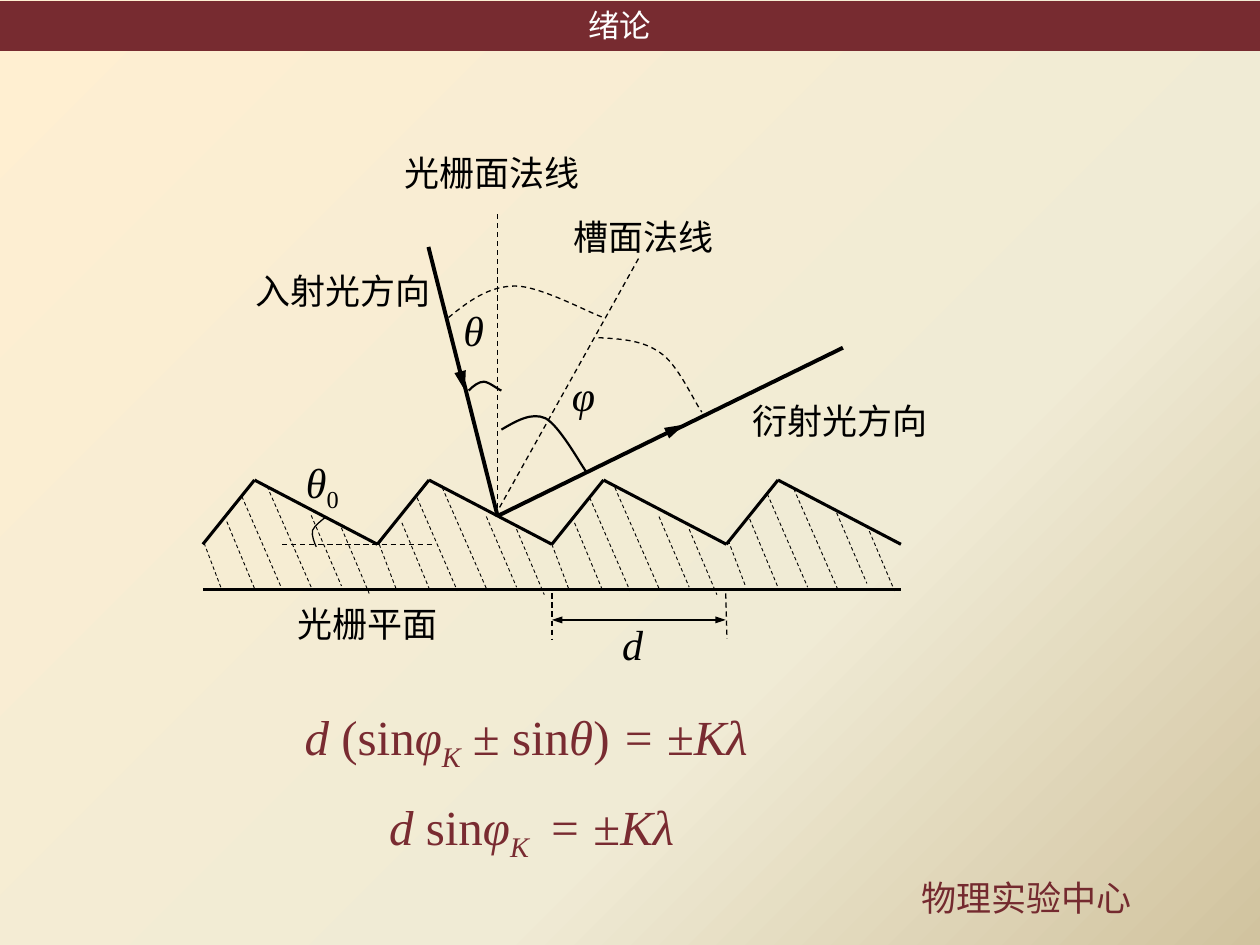
from copy import deepcopy

from lxml.etree import SubElement
from pptx import Presentation
from pptx.dml.color import RGBColor
from pptx.enum.dml import MSO_LINE
from pptx.enum.shapes import MSO_CONNECTOR, MSO_SHAPE
from pptx.enum.text import MSO_ANCHOR, MSO_AUTO_SIZE, PP_ALIGN
from pptx.oxml.ns import qn
from pptx.util import Inches, Pt

CJK = "Noto Sans CJK SC"
SERIF = "Times New Roman"
BLACK, BAR, FOOTER, FORMULA = "000000", "772B30", "742A2F", "792B31"
BACKGROUND = [(0, "FFEFD1"), (0.65, "F0EBD5"), (1, "D1C39F")]

PITCH, TEETH = 1.385, 4
GRATING_LEFT, VALLEY, PEAK, BASE = 1.61, 4.32, 3.81, 4.68
PEAK_OFFSET = 0.41
HATCH = [
    (1.62, 4.31, 1.76, 4.68), (1.8, 4.14, 2.02, 4.67),
    (1.92, 3.94, 2.24, 4.68), (2.12, 3.86, 2.47, 4.66),
    (2.47, 4.09, 2.71, 4.65), (2.71, 4.19, 2.93, 4.71),
]
HATCH_SHIFTS = [(0, 0), (1.39, 0.01), (2.76, 0.01)]
LAST_HATCH = [
    (5.78, 4.29, 5.92, 4.66), (5.95, 4.12, 6.17, 4.65),
    (6.09, 3.92, 6.41, 4.66), (6.3, 3.88, 6.65, 4.68),
    (6.64, 4.07, 6.88, 4.63), (6.88, 4.17, 7.1, 4.69),
]

DASHED_LINES = [
    (2.24, 4.32, 3.45, 4.32), (3.95, 1.7, 3.95, 4.09), (3.93, 4.09, 5.08, 2.03),
    (4.38, 4.71, 4.38, 5.07), (5.76, 4.71, 5.77, 5.07),
]
RAY_ARROW = {"tailEnd": ("med", "lg")}
RAYS = [
    ((3.4, 1.96, 3.69, 3.1), RAY_ARROW), ((3.68, 3.03, 3.95, 4.1), {}),
    ((3.96, 4.09, 5.43, 3.37), RAY_ARROW), ((6.69, 2.76, 5.32, 3.43), {}),
]
PITCH_LINE = (4.38, 4.92, 5.76, 4.92)
PITCH_ARROWS = {"headEnd": ("sm", "med"), "tailEnd": ("sm", "med")}

ARCS = [
    ([(3.72, 3.1), (3.76, 3.06), (3.8, 3.03), (3.84, 3.03),
      (3.88, 3.03), (3.95, 3.09), (3.98, 3.1)], 1.25, False),
    ([(3.98, 3.41), (4.1, 3.34), (4.22, 3.27), (4.33, 3.32),
      (4.44, 3.38), (4.6, 3.67), (4.65, 3.74)], 1.25, False),
    ([(2.59, 4.1), (2.54, 4.14), (2.5, 4.17), (2.48, 4.21),
      (2.47, 4.25), (2.5, 4.32), (2.51, 4.34)], 0.75, False),
    ([(3.56, 2.52), (3.72, 2.39), (3.88, 2.27), (4.09, 2.27),
      (4.29, 2.27), (4.67, 2.48), (4.79, 2.52)], 0.75, True),
    ([(4.75, 2.68), (4.93, 2.69), (5.1, 2.7), (5.24, 2.8),
      (5.38, 2.89), (5.51, 3.19), (5.57, 3.27)], 0.75, True),
]

LABELS = [
    ("光栅平面", 2.26, 4.73), ("入射光方向", 1.93, 2.09), ("衍射光方向", 5.87, 3.12),
    ("光栅面法线", 3.11, 1.15), ("槽面法线", 4.45, 1.66),
]
SYMBOLS = [
    ([("θ", "italic"), ("0", "sub")], 2.33, 3.57, 0.67),
    ([("θ", "italic")], 3.58, 2.37, 0.6),
    ([("φ", "italic")], 4.44, 2.88, 0.6),
    ([("d", "italic")], 4.84, 4.86, 0.6),
]
EQUATIONS = [
    ([("d ", "italic"), ("(sin", ""), ("φ", "italic"), ("K", "italic sub"), (" ± sin", ""),
      ("θ", "italic"), (") ", ""), ("= ", "italic"), ("±", ""), ("Kλ", "italic")],
     2.32, 5.56, 4.23),
    ([("d ", "italic"), ("sin", ""), ("φ", "italic"), ("K ", "italic sub"),
      (" = ", "italic"), ("±", ""), ("Kλ", "italic")], 2.99, 6.27, 2.83),
]


def color(value):
    return RGBColor.from_string(value)


def style_font(run, size, name, value):
    run.font.size = Pt(size)
    run.font.name = name
    run.font.color.rgb = color(value)
    if name != SERIF:
        SubElement(run.font._element, qn("a:ea"), typeface=CJK)


def style_line(line, width, dashed):
    line.color.rgb = color(BLACK)
    line.width = Pt(width)
    if dashed:
        line.dash_style = MSO_LINE.DASH


def add_line(shapes, ends, width, dashed=False, arrows=None):
    connector = shapes.add_connector(MSO_CONNECTOR.STRAIGHT, *map(Inches, ends))
    style_line(connector.line, width, dashed)
    for end, (breadth, length) in (arrows or {}).items():
        SubElement(connector.line._get_or_add_ln(), qn(f"a:{end}"),
                   type="triangle", w=breadth, len=length)
    SubElement(connector._element.spPr, qn("a:effectLst"))


def add_arc(shapes, controls, width, dashed):
    points = [(Inches(x), Inches(y)) for x, y in controls]
    builder = shapes.build_freeform(*points[0])
    builder.add_line_segments(points[1:], close=False)
    shape = builder.convert_to_shape()
    outline = shape._element.xpath(".//a:path")[0]
    segments = outline.findall(qn("a:lnTo"))
    for first in range(0, len(segments), 3):
        curve = SubElement(outline, qn("a:cubicBezTo"))
        for segment in segments[first:first + 3]:
            curve.append(segment[0])
            outline.remove(segment)
    shape.shadow.inherit = False
    shape.fill.background()
    style_line(shape.line, width, dashed)


def add_text(shapes, parts, place, size, name, value=BLACK, align=PP_ALIGN.LEFT, wrap=True):
    text_frame = shapes.add_textbox(*map(Inches, place)).text_frame
    text_frame.word_wrap = wrap
    paragraph = text_frame.paragraphs[0]
    paragraph.alignment = align
    for text, style in parts:
        run = paragraph.add_run()
        run.text = text
        style_font(run, size, name, value)
        run.font.italic = "italic" in style
        if "sub" in style:
            run.font._element.set("baseline", "-25000")


def set_background(slide):
    fill = slide.background.fill
    fill.gradient()
    fill.gradient_angle = 315
    stops = slide.element.xpath(".//a:gsLst")[0]
    stops.append(deepcopy(stops[-1]))
    for stop, (position, value) in zip(fill.gradient_stops, BACKGROUND):
        stop.position = position
        stop.color.rgb = color(value)


def add_header(slide):
    bar = slide.shapes.add_shape(
        MSO_SHAPE.RECTANGLE, 0, Inches(0.01), Inches(10), Inches(0.39))
    bar.shadow.inherit = False
    bar.fill.solid()
    bar.fill.fore_color.rgb = color(BAR)
    bar.line.color.rgb = color(BAR)
    bar.line.width = Pt(0.75)
    slide.shapes._spTree.insert(2, bar._element)

    title = slide.shapes.title
    title.left, title.top, title.width, title.height = map(Inches, (4.57, 0, 1.36, 0.4))
    text_frame = title.text_frame
    text_frame.text = "绪论"
    text_frame.auto_size = MSO_AUTO_SIZE.NONE
    text_frame.vertical_anchor = MSO_ANCHOR.TOP
    text_frame.paragraphs[0].alignment = PP_ALIGN.LEFT
    style_font(text_frame.paragraphs[0].runs[0], 18, CJK, "FFFFFF")


def add_grating(shapes):
    for tooth in range(TEETH):
        left = GRATING_LEFT + tooth * PITCH
        peak = left + PEAK_OFFSET
        add_line(shapes, (left, VALLEY, peak, PEAK), 1.75)
        add_line(shapes, (peak, PEAK, left + PITCH, VALLEY), 1.75)
    add_line(shapes, (GRATING_LEFT, BASE, GRATING_LEFT + TEETH * PITCH, BASE), 1.75)
    hatch = [(x1 + dx, y1 + dy, x2 + dx, y2 + dy)
             for dx, dy in HATCH_SHIFTS for x1, y1, x2, y2 in HATCH]
    for ends in hatch + LAST_HATCH:
        add_line(shapes, ends, 0.5, dashed=True)


def main():
    presentation = Presentation()
    presentation.slide_width, presentation.slide_height = Inches(10), Inches(7.5)
    slide = presentation.slides.add_slide(presentation.slide_layouts[5])
    set_background(slide)
    add_header(slide)
    add_text(slide.shapes, [("物理实验中心", "")], (7.19, 6.91, 1.92, 0.44), 20, CJK, FOOTER,
             PP_ALIGN.CENTER)
    diagram = slide.shapes.add_group_shape().shapes
    add_grating(diagram)
    for ends in DASHED_LINES:
        add_line(diagram, ends, 0.75, dashed=True)
    for ends, arrows in RAYS:
        add_line(diagram, ends, 2.25, arrows=arrows)
    add_line(diagram, PITCH_LINE, 1.25, arrows=PITCH_ARROWS)
    for arc in ARCS:
        add_arc(diagram, *arc)
    for text, left, top in LABELS:
        add_text(diagram, [(text, "")], (left, top, 1.85, 0.44), 20, "Calibri",
                 align=PP_ALIGN.JUSTIFY)
    for parts, left, top, width in SYMBOLS:
        add_text(diagram, parts, (left, top, width, 0.51), 24, SERIF)
    for parts, left, top, width in EQUATIONS:
        add_text(slide.shapes, parts, (left, top, width, 0.57), 28, SERIF, FORMULA, wrap=False)
    presentation.save("out.pptx")


if __name__ == "__main__":
    main()
